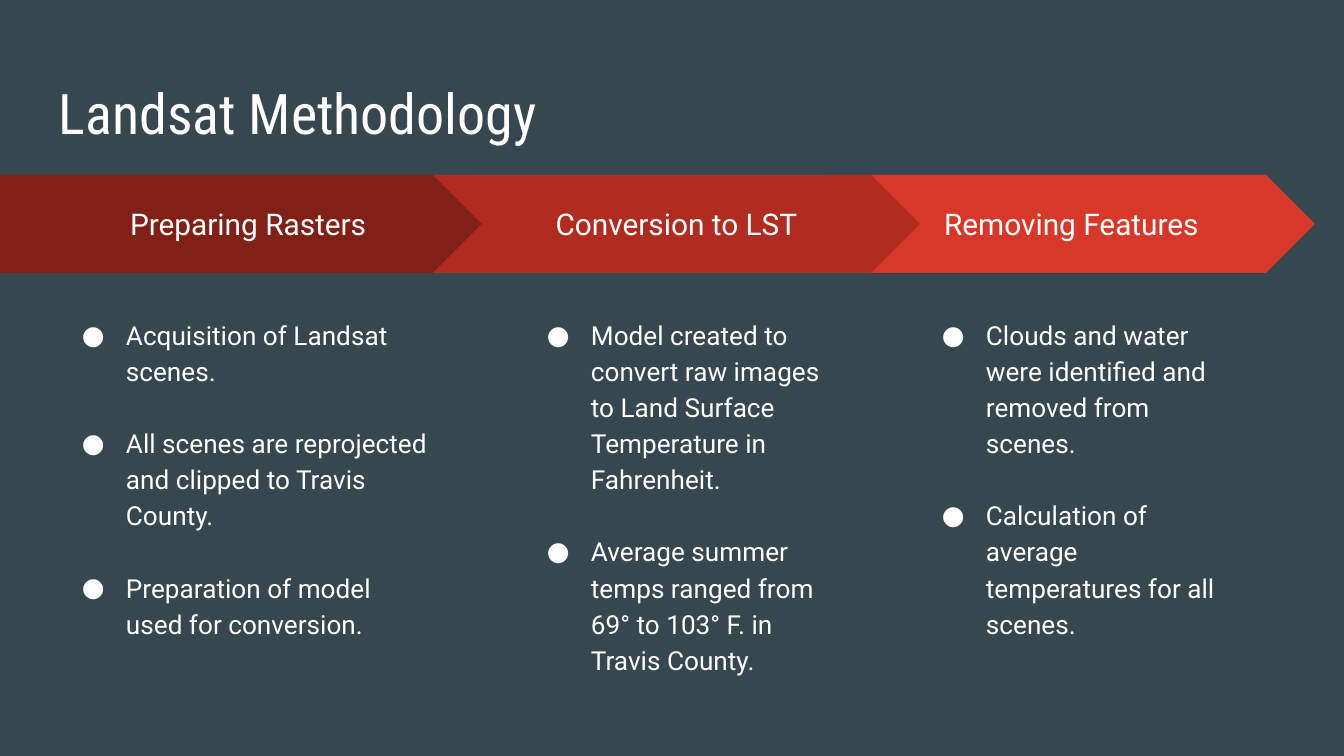
from lxml.etree import SubElement
from pptx import Presentation
from pptx.dml.color import RGBColor
from pptx.enum.shapes import MSO_SHAPE as Shape
from pptx.enum.text import MSO_ANCHOR as Anchor, PP_ALIGN as Align
from pptx.oxml.ns import qn
from pptx.util import Emu, Pt

SLATE = RGBColor(0x37, 0x47, 0x4F)
WHITE = RGBColor(0xFF, 0xFF, 0xFF)
DARK_RED = RGBColor(0x80, 0x20, 0x17)
MID_RED = RGBColor(0xB0, 0x2C, 0x20)
BRIGHT_RED = RGBColor(0xD8, 0x38, 0x29)

BODY_FONT = "Roboto"
TITLE_FONT = "Roboto Condensed"
PX_PER_INCH = 134.4
INSET = 13
ARROW_TOP, ARROW_HEIGHT = 175, 98
NOTES_TOP, NOTES_HEIGHT = 302, 384
INDENT, HANGING = 67, 44

STEPS = [
    ("Removing Features", Shape.CHEVRON, BRIGHT_RED, (828, 487), (906, 329), [
        "Clouds and water were identified and removed from scenes.",
        "Calculation of average temperatures for all scenes.",
    ]),
    ("Preparing Rasters", Shape.PENTAGON, DARK_RED, (0, 521), (46, 400), [
        "Acquisition of Landsat scenes.",
        "All scenes are reprojected and clipped to Travis County.",
        "Preparation of model used for conversion.",
    ]),
    ("Conversion to LST", Shape.CHEVRON, MID_RED, (433, 487), (511, 329), [
        "Model created to convert raw images to Land Surface Temperature in Fahrenheit.",
        "Average summer temps ranged from 69° to 103° F. in Travis County.",
    ]),
]


def px(length):
    """Turn pixels into EMU."""
    return Emu(round(length * 914400 / PX_PER_INCH))


def prepare_frame(text_frame, anchor):
    """Set wrapping, equal insets and the vertical anchor."""
    text_frame.word_wrap = True
    text_frame.vertical_anchor = anchor
    text_frame.margin_left = text_frame.margin_right = px(INSET)
    text_frame.margin_top = text_frame.margin_bottom = px(INSET)


def format_paragraph(paragraph, size, font=BODY_FONT):
    """Give every run of a paragraph its font, size and white colour."""
    for run in paragraph.runs:
        run.font.name = font
        run.font.size = Pt(size)
        run.font.color.rgb = WHITE


def add_bullet(paragraph):
    """Add a white round bullet with a hanging indent."""
    properties = paragraph._p.get_or_add_pPr()
    properties.set("marL", str(px(INDENT)))
    properties.set("indent", str(-px(HANGING)))
    color = SubElement(properties, qn("a:buClr"))
    SubElement(color, qn("a:srgbClr"), val=str(WHITE))
    SubElement(properties, qn("a:buFont"), typeface=BODY_FONT)
    SubElement(properties, qn("a:buChar"), char="●")


def add_title(slide, text):
    """Add the slide title."""
    box = slide.shapes.add_textbox(px(46), px(66), px(1253), px(85))
    prepare_frame(box.text_frame, Anchor.TOP)
    box.text_frame.text = text
    format_paragraph(box.text_frame.paragraphs[0], 30, TITLE_FONT)


def add_arrow(slide, label, kind, color, left, width):
    """Add one labelled arrow of the process band."""
    arrow = slide.shapes.add_shape(
        kind, px(left), px(ARROW_TOP), px(width), px(ARROW_HEIGHT))
    arrow.shadow.inherit = False
    arrow.adjustments[0] = 0.5
    arrow.fill.solid()
    arrow.fill.fore_color.rgb = color
    arrow.line.fill.background()
    prepare_frame(arrow.text_frame, Anchor.MIDDLE)
    arrow.text_frame.text = label
    paragraph = arrow.text_frame.paragraphs[0]
    paragraph.alignment = Align.CENTER
    format_paragraph(paragraph, 16)


def add_notes_column(slide, items, left, width):
    """Add the bulleted list below an arrow."""
    box = slide.shapes.add_textbox(
        px(left), px(NOTES_TOP), px(width), px(NOTES_HEIGHT))
    prepare_frame(box.text_frame, Anchor.TOP)
    box.text_frame.text = "\n".join(items)
    for index, paragraph in enumerate(box.text_frame.paragraphs):
        paragraph.line_spacing = 1.15
        paragraph.space_before = Pt(19.3 if index else 0)
        add_bullet(paragraph)
        format_paragraph(paragraph, 14)


def main():
    """Build and save the slide."""
    presentation = Presentation()
    presentation.slide_width, presentation.slide_height = px(1344), px(756)
    slide = presentation.slides.add_slide(presentation.slide_layouts[6])
    slide.background.fill.solid()
    slide.background.fill.fore_color.rgb = SLATE
    add_title(slide, "Landsat Methodology")
    for label, kind, color, arrow_span, notes_span, items in STEPS:
        add_arrow(slide, label, kind, color, *arrow_span)
        add_notes_column(slide, items, *notes_span)
    presentation.save("out.pptx")


if __name__ == "__main__":
    main()
